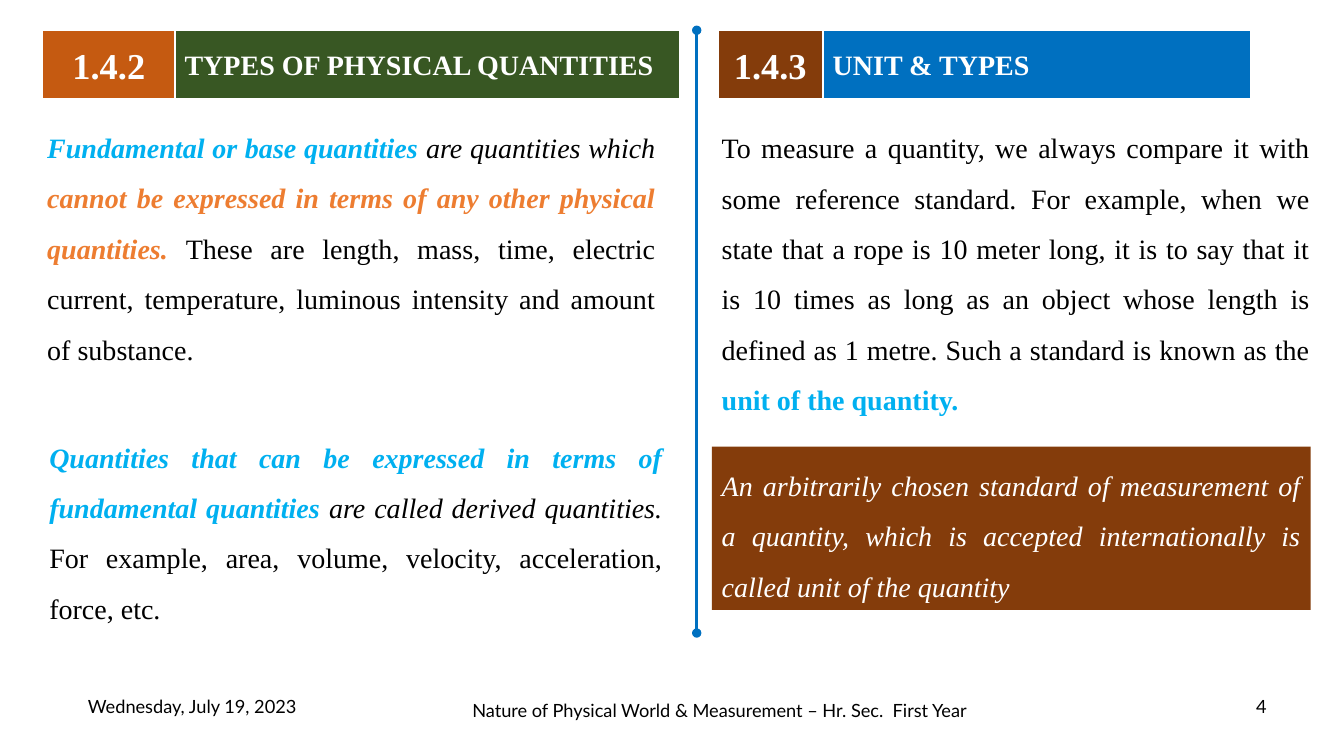
from pptx import Presentation
from pptx.dml.color import RGBColor
from pptx.enum.shapes import MSO_CONNECTOR, MSO_SHAPE
from pptx.enum.text import MSO_ANCHOR, MSO_AUTO_SIZE, PP_ALIGN
from pptx.oxml.ns import qn
from pptx.util import Emu, Pt
from lxml.etree import SubElement

PX = 9144  # 100 px to the inch
SERIF = "Times New Roman"
BLACK, WHITE, SKY, ORANGE = "000000", "FFFFFF", "00B0F0", "ED7D31"
BLUE, BROWN = "0070C0", "843C0B"


def color(hex_string):
    return RGBColor.from_string(hex_string)


def write(shape, runs, size, font=SERIF, align=PP_ALIGN.CENTER, anchor=MSO_ANCHOR.MIDDLE):
    """Fill a shape with one paragraph of (text, color, bold, italic) runs."""
    frame = shape.text_frame
    frame.word_wrap = True
    frame.vertical_anchor = anchor
    paragraph = frame.paragraphs[0]
    paragraph.alignment = align
    for text, hex_string, bold, italic in runs:
        run = paragraph.add_run()
        run.text = text
        run.font.name = font
        run.font.size = Pt(size)
        run.font.bold = bold
        run.font.italic = italic
        run.font.color.rgb = color(hex_string)


presentation = Presentation()
presentation.slide_width = Emu(1333 * PX)
presentation.slide_height = Emu(750 * PX)
slide = presentation.slides.add_slide(presentation.slide_layouts[5])
shapes = slide.shapes

# Footer
footers = [
    ("Wednesday, July 19, 2023", 71, 681, 239),
    ("4", 1230, 681, 42),
    ("Nature of Physical World & Measurement – Hr. Sec.  First Year", 455, 685, 517),
]
for text, left, top, width in footers:
    box = shapes.add_textbox(left * PX, top * PX, width * PX, 40 * PX)
    write(box, [(text, BLACK, False, False)], 13, "Lato")
    box.text_frame.word_wrap = False

# Divider between the two columns
divider = shapes.add_connector(MSO_CONNECTOR.STRAIGHT, 691 * PX, 30 * PX, 691 * PX, 628 * PX)
divider.line.color.rgb = color(BLUE)
divider.line.width = Pt(2.25)
line_xml = divider.line._get_or_add_ln()
for end in ("a:headEnd", "a:tailEnd"):
    SubElement(line_xml, qn(end), type="oval")
SubElement(divider._element.spPr, qn("a:effectLst"))

# Section headings: a number block and a name block
headings = [
    ("1.4.2", 42, 132, "C55A11", 26, PP_ALIGN.CENTER),
    ("TYPES OF PHYSICAL QUANTITIES", 173, 502, "385723", 20, PP_ALIGN.LEFT),
    ("1.4.3", 712, 104, BROWN, 26, PP_ALIGN.CENTER),
    ("UNIT & TYPES", 816, 425, BLUE, 20, PP_ALIGN.LEFT),
]
for text, left, width, fill, size, align in headings:
    if text == "TYPES OF PHYSICAL QUANTITIES":
        block = shapes.title
        block.left, block.top, block.width, block.height = (
            Emu(length * PX) for length in (left, 30, width, 68))
        block.text_frame.auto_size = MSO_AUTO_SIZE.NONE
    else:
        block = shapes.add_shape(MSO_SHAPE.RECTANGLE, left * PX, 30 * PX, width * PX, 68 * PX)
        block.shadow.inherit = False
    block.fill.solid()
    block.fill.fore_color.rgb = color(fill)
    block.line.color.rgb = color(WHITE)
    block.line.width = Pt(1.5)
    write(block, [(text, WHITE, True, False)], size, align=align)

# Body paragraphs
bodies = [
    (37, 108, 623, 263, None, [
        ("Fundamental or base quantities ", SKY, True, True),
        ("are quantities which ", BLACK, False, True),
        ("cannot be expressed in terms of any other physical quantities. ", ORANGE, True, True),
        ("These are length, mass, time, electric current, temperature, luminous intensity "
         "and amount of substance.", BLACK, False, False),
    ]),
    (39, 415, 628, 212, None, [
        ("Quantities that can be expressed in terms of fundamental quantities", SKY, True, True),
        (" are called derived quantities. ", BLACK, False, True),
        ("For example, area, volume, velocity, acceleration, force, etc.", BLACK, False, False),
    ]),
    (706, 108, 603, 308, None, [
        ("To measure a quantity, we always compare it with some reference standard. "
         "For example, when we state that a rope is 10 meter long, it is to say that it is "
         "10 times as long as an object whose length is defined as 1 metre. "
         "Such a standard is known as the ", BLACK, False, False),
        ("unit of the quantity.", SKY, True, False),
    ]),
    (706, 443, 594, 162, BROWN, [
        ("An arbitrarily chosen standard of measurement of a quantity, which is accepted "
         "internationally is called unit of the quantity", WHITE, False, True),
    ]),
]
for left, top, width, height, fill, runs in bodies:
    box = shapes.add_textbox(left * PX, top * PX, width * PX, height * PX)
    if fill:
        box.fill.solid()
        box.fill.fore_color.rgb = color(fill)
    write(box, runs, 20, align=PP_ALIGN.JUSTIFY, anchor=MSO_ANCHOR.TOP)
    box.text_frame.paragraphs[0].line_spacing = 1.5
    box.text_frame.auto_size = MSO_AUTO_SIZE.SHAPE_TO_FIT_TEXT

presentation.save("out.pptx")
